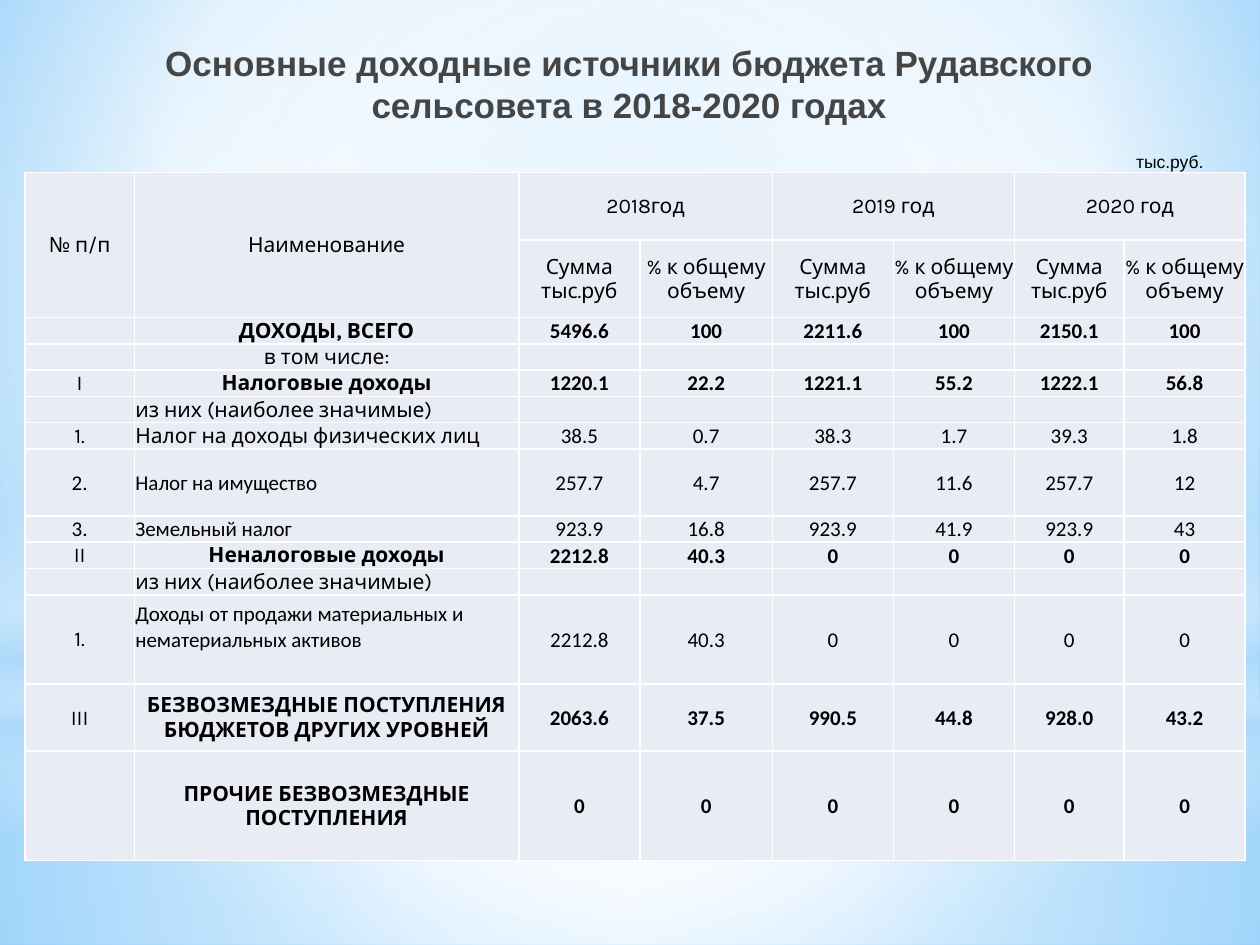
import lxml.etree
import pptx
import pptx.dml.color
import pptx.enum.shapes
import pptx.enum.text
import pptx.oxml.ns
import pptx.util

Cm = pptx.util.Cm
Pt = pptx.util.Pt
qn = pptx.oxml.ns.qn
CENTER = pptx.enum.text.PP_ALIGN.CENTER
LEFT = pptx.enum.text.PP_ALIGN.LEFT
RIGHT = pptx.enum.text.PP_ALIGN.RIGHT
RECTANGLE = pptx.enum.shapes.MSO_SHAPE.RECTANGLE
OVAL = pptx.enum.shapes.MSO_SHAPE.OVAL

COLUMN_WIDTHS = [2.21, 7.75, 2.44, 2.67, 2.44, 2.44, 2.21, 2.44]
HEADER_HEIGHTS = [1.36, 1.56]
LINE_HEIGHT = 0.53
YEARS = ["2018год", "2019 год", "2020 год"]
MEASURES = ["Сумма тыс.руб", "% к общему объему"]
NO_VALUES = [""] * 6
ZEROS = ["0"] * 6
SALES_ROW = 11

# number, number font, name, name font, bold, alignment, values, height
INCOME = [
    ("", "Karla", "ДОХОДЫ, ВСЕГО", "Karla", True, CENTER,
     ["5496.6", "100", "2211.6", "100", "2150.1", "100"], LINE_HEIGHT),
    ("", "Karla", "в том числе:", "Karla", False, CENTER, NO_VALUES, LINE_HEIGHT),
    ("I", "Karla", "Налоговые доходы", "Karla", True, CENTER,
     ["1220.1", "22.2", "1221.1", "55.2", "1222.1", "56.8"], LINE_HEIGHT),
    ("", "Karla", "из них (наиболее значимые)", "Karla", False, LEFT, NO_VALUES, LINE_HEIGHT),
    ("1.", "Karla", "Налог на доходы физических лиц", "Karla", False, LEFT,
     ["38.5", "0.7", "38.3", "1.7", "39.3", "1.8"], LINE_HEIGHT),
    ("2.", "Calibri", "Налог на имущество", "Calibri", False, LEFT,
     ["257.7", "4.7", "257.7", "11.6", "257.7", "12"], 1.35),
    ("3.", "Calibri", "Земельный налог", "Calibri", False, LEFT,
     ["923.9", "16.8", "923.9", "41.9", "923.9", "43"], LINE_HEIGHT),
    ("II", "Karla", "Неналоговые доходы", "Karla", True, CENTER,
     ["2212.8", "40.3"] + ZEROS[:4], LINE_HEIGHT),
    ("", "Karla", "из них (наиболее значимые)", "Karla", False, LEFT, NO_VALUES, LINE_HEIGHT),
    ("1.", "Karla", "Доходы от продажи материальных и нематериальных активов", "Calibri",
     False, LEFT, ["2212.8", "40.3"] + ZEROS[:4], 1.8),
    ("III", "Karla", "БЕЗВОЗМЕЗДНЫЕ ПОСТУПЛЕНИЯ БЮДЖЕТОВ ДРУГИХ УРОВНЕЙ", "Karla",
     True, CENTER, ["2063.6", "37.5", "990.5", "44.8", "928.0", "43.2"], 1.35),
    ("", "Karla", "ПРОЧИЕ БЕЗВОЗМЕЗДНЫЕ ПОСТУПЛЕНИЯ", "Karla", True, CENTER, ZEROS, 2.21),
]


def rgb(color):
    """Return the colour object for a hex string."""
    return pptx.dml.color.RGBColor.from_string(color)


def set_gradient(fill, owner, stops, focus=None):
    """Give a fill stops of position, colour and opacity, round a focus or downwards."""
    fill.gradient()
    gradient = owner.find(".//" + qn("a:gradFill"))
    for child in list(gradient):
        gradient.remove(child)
    stop_list = lxml.etree.SubElement(gradient, qn("a:gsLst"))
    for position, color, opacity in stops:
        stop = lxml.etree.SubElement(stop_list, qn("a:gs"), pos=str(position * 1000))
        tint = lxml.etree.SubElement(stop, qn("a:srgbClr"), val=color)
        lxml.etree.SubElement(tint, qn("a:alpha"), val=str(opacity * 1000))
    if focus is None:
        lxml.etree.SubElement(gradient, qn("a:lin"), ang="5400000", scaled="0")
        return
    circle = lxml.etree.SubElement(gradient, qn("a:path"), path="circle")
    sides = {side: str(share * 1000) for side, share in zip("ltrb", focus)}
    lxml.etree.SubElement(circle, qn("a:fillToRect"), **sides)


def add_glow(slide, outline, top, height, stops, focus=None):
    """Add a full-width translucent gradient shape."""
    glow = slide.shapes.add_shape(outline, 0, Cm(top), Cm(25.4), Cm(height))
    glow.shadow.inherit = False
    glow.line.fill.background()
    set_gradient(glow.fill, glow._element.spPr, stops, focus)


def add_backdrop(slide):
    """Paint the blue sky background and its light bands."""
    middle = (50, 50, 50, 50)
    set_gradient(slide.background.fill, slide._element,
                 [(0, "9ED5FF", 100), (60, "FFFFFF", 100), (100, "5BB9FF", 100)],
                 (20, 10, 20, 60))
    add_glow(slide, RECTANGLE, 14.17, 4.88,
             [(0, "FFFFFF", 91), (37, "FFFFFF", 76), (100, "B4DCFA", 79)], middle)
    add_glow(slide, RECTANGLE, 0, 14.17,
             [(0, "FFFFFF", 89), (48, "FFFFFF", 62), (100, "B4DCFA", 79)], middle)
    add_glow(slide, RECTANGLE, 10.46, 6.35,
             [(0, "FFFFFF", 0), (29, "FFFFFF", 30), (45, "B4DCFA", 40),
              (55, "FFFFFF", 26), (65, "B4DCFA", 60), (100, "FFFFFF", 0)])
    add_glow(slide, OVAL, 4.45, 14.17, [(0, "FFFFFF", 100), (56, "FFFFFF", 0)], middle)


def write(frame, text, font, size, color="000000", bold=False, align=CENTER):
    """Write one run into the first paragraph of a text frame."""
    paragraph = frame.paragraphs[0]
    paragraph.alignment = align
    if not text:
        paragraph._p.get_or_add_endParaRPr().set("sz", str(size * 100))
        return
    run = paragraph.add_run()
    run.text = text
    run.font.name = font
    run.font.size = Pt(size)
    run.font.bold = bold
    run.font.color.rgb = rgb(color)


def add_heading(slide):
    """Place the title over the backdrop and the unit note under it."""
    title = slide.shapes.title
    slide.shapes._spTree.append(title._element)
    title.left, title.top, title.width, title.height = Cm(3.07), Cm(0.71), Cm(19.23), Cm(3.18)
    title.text_frame.word_wrap = True
    title.text_frame.auto_size = pptx.enum.text.MSO_AUTO_SIZE.NONE
    title.text_frame.vertical_anchor = pptx.enum.text.MSO_ANCHOR.TOP
    write(title.text_frame, "Основные доходные источники бюджета Рудавского сельсовета "
          "в 2018-2020 годах", "Arial", 20, "454545", True)
    unit = slide.shapes.add_textbox(Cm(20.12), Cm(2.92), Cm(4.39), Cm(0.69))
    unit.text_frame.word_wrap = True
    write(unit.text_frame, "тыс.руб.", "Arial", 10, align=RIGHT)


def style_cell(cell):
    """Give a cell thin white borders, a pale fill and tight margins."""
    properties = cell._tc.get_or_add_tcPr()
    for side in ("lnL", "lnR", "lnT", "lnB"):
        border = lxml.etree.SubElement(properties, qn("a:" + side), w=str(Pt(1)))
        paint = lxml.etree.SubElement(border, qn("a:solidFill"))
        lxml.etree.SubElement(paint, qn("a:srgbClr"), val="FFFFFF")
    cell.fill.solid()
    cell.fill.fore_color.rgb = rgb("E9EBF5")
    cell.margin_left = cell.margin_right = cell.margin_top = Cm(0.02)
    cell.margin_bottom = 0
    cell.vertical_anchor = pptx.enum.text.MSO_ANCHOR.MIDDLE


def fill_header(table):
    """Merge and label the two header rows."""
    for column, label in enumerate(["№ п/п", "Наименование"]):
        table.cell(0, column).merge(table.cell(1, column))
        write(table.cell(0, column).text_frame, label, "Karla", 12)
    for column, year in zip(range(2, 8, 2), YEARS):
        table.cell(0, column).merge(table.cell(0, column + 1))
        write(table.cell(0, column).text_frame, year, "Karla", 12)
        for offset, measure in enumerate(MEASURES):
            write(table.cell(1, column + offset).text_frame, measure, "Karla", 12)


def add_income_table(slide):
    """Add the table of income sources by year."""
    heights = HEADER_HEIGHTS + [income[-1] for income in INCOME]
    table = slide.shapes.add_table(len(heights), len(COLUMN_WIDTHS), Cm(0.5), Cm(3.48),
                                   Cm(sum(COLUMN_WIDTHS)), Cm(sum(heights))).table
    for column, width in zip(table.columns, COLUMN_WIDTHS):
        column.width = Cm(width)
    for row, height in zip(table.rows, heights):
        row.height = Cm(height)
    for cell in table.iter_cells():
        style_cell(cell)
    fill_header(table)
    for row, income in enumerate(INCOME, start=len(HEADER_HEIGHTS)):
        number, number_font, name, name_font, bold, align, values, _ = income
        write(table.cell(row, 0).text_frame, number, number_font, 12)
        write(table.cell(row, 1).text_frame, name, name_font, 12, bold=bold, align=align)
        for column, value in enumerate(values, start=2):
            write(table.cell(row, column).text_frame, value, "Calibri", 12, bold=bold)
    table.cell(SALES_ROW, 1).margin_bottom = Cm(0.5)


def main():
    """Build the budget income slide and save it."""
    deck = pptx.Presentation()
    deck.slide_width, deck.slide_height = Cm(25.4), Cm(19.05)
    slide = deck.slides.add_slide(deck.slide_layouts[5])
    add_backdrop(slide)
    add_heading(slide)
    add_income_table(slide)
    deck.save("out.pptx")


if __name__ == "__main__":
    main()
